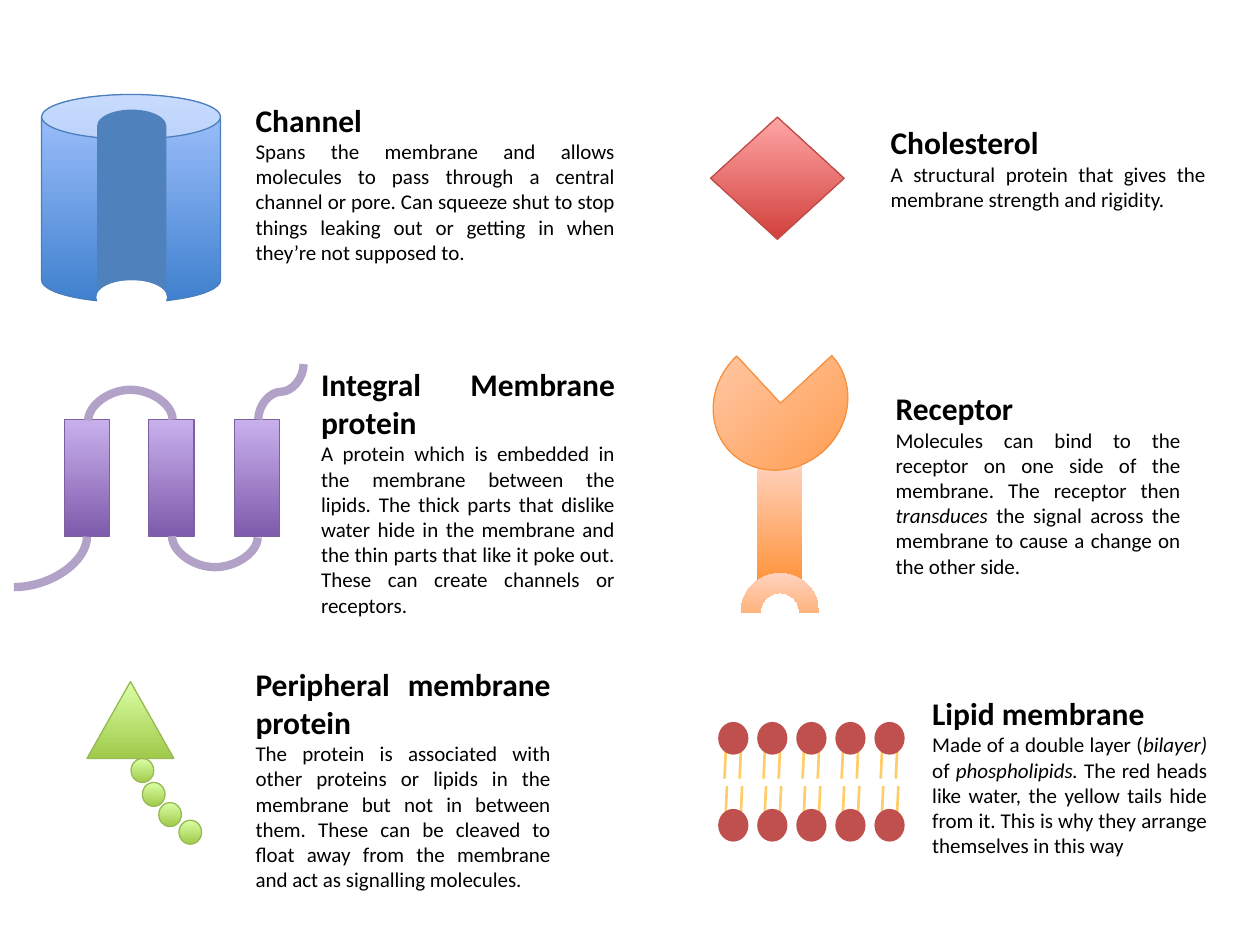
from dataclasses import dataclass

from lxml import etree
from pptx import Presentation
from pptx.dml.color import RGBColor
from pptx.enum.shapes import MSO_CONNECTOR, MSO_SHAPE
from pptx.enum.text import MSO_AUTO_SIZE, PP_ALIGN
from pptx.oxml.ns import qn
from pptx.util import Inches, Pt

CURVE, STRAIGHT = MSO_CONNECTOR.CURVE, MSO_CONNECTOR.STRAIGHT
CAN, OVAL, RECT = MSO_SHAPE.CAN, MSO_SHAPE.OVAL, MSO_SHAPE.RECTANGLE
PIE, ARC = MSO_SHAPE.PIE, MSO_SHAPE.BLOCK_ARC
TRIANGLE, DIAMOND = MSO_SHAPE.ISOSCELES_TRIANGLE, MSO_SHAPE.DIAMOND
JUSTIFY = PP_ALIGN.JUSTIFY
GROW = MSO_AUTO_SIZE.SHAPE_TO_FIT_TEXT


@dataclass
class Theme:
    font: str = "Calibri"
    heading: float = 18
    body: float = 12
    outline: float = 0.75
    loop_width: float = 4.75
    tail_width: float = 1.5
    text: str = "000000"
    white: str = "FFFFFF"
    pore: str = "4F81BD"
    loop: str = "B3A2C7"
    head: str = "C0504D"
    tail: str = "FFCC66"
    blue: tuple = ("3F80CE", "A4C4FF")
    blue_line: str = "4B7EBC"
    orange: tuple = ("FF953E", "FFD2BD")
    orange_line: str = "F69240"
    green: tuple = ("A0CA4A", "DAFFA5")
    green_line: str = "98B955"
    red: tuple = ("D1403C", "FFA6A5")
    red_line: str = "BF4C48"
    purple: tuple = ("7F5BAB", "C8B0ED")
    purple_line: str = "7D60A0"


theme = Theme()


def add_part(shapes, kind, box, fill, line=None, rotation=0):
    sp = shapes.add_shape(kind, *map(Inches, box))
    sp.shadow.inherit = False
    sp.rotation = rotation
    if isinstance(fill, tuple):
        sp.fill.gradient()
        sp.fill.gradient_angle = 90
        for stop, color in zip(sp.fill.gradient_stops, fill):
            stop.color.rgb = RGBColor.from_string(color)
    else:
        sp.fill.solid()
        sp.fill.fore_color.rgb = RGBColor.from_string(fill)
    if line:
        sp.line.color.rgb = RGBColor.from_string(line)
        sp.line.width = Pt(theme.outline)
    else:
        sp.line.fill.background()


def add_line(shapes, kind, ends, color, width):
    cxn = shapes.add_connector(kind, *map(Inches, ends))
    cxn.line.color.rgb = RGBColor.from_string(color)
    cxn.line.width = Pt(width)
    etree.SubElement(cxn._element.spPr, qn("a:effectLst"))
    return cxn


prs = Presentation()
prs.slide_width, prs.slide_height = Inches(10), Inches(7.5)
s = prs.slides.add_slide(prs.slide_layouts[6])

channel = s.shapes.add_group_shape().shapes
add_part(channel, CAN, (0.33, 0.75, 1.42, 1.65), theme.blue, theme.blue_line)
add_part(channel, OVAL, (0.77, 0.87, 0.55, 0.26), theme.pore)
add_part(channel, RECT, (0.77, 1, 0.55, 1.37), theme.pore)
add_part(channel, OVAL, (0.77, 2.23, 0.55, 0.26), theme.white, theme.white)

receptor = s.shapes.add_group_shape().shapes
add_part(receptor, RECT, (6.01, 3.67, 0.36, 0.93), theme.orange)
add_part(receptor, PIE, (5.64, 2.69, 1.11, 1.02), theme.orange, theme.orange_line, 317.1)
add_part(receptor, ARC, (5.88, 4.55, 0.62, 0.62), theme.orange)

peripheral = s.shapes.add_group_shape().shapes
add_part(peripheral, TRIANGLE, (0.69, 5.41, 0.69, 0.61), theme.green, theme.green_line)
for x, y in [(1.04, 6.02), (1.13, 6.21), (1.26, 6.37), (1.42, 6.51)]:
    add_part(peripheral, OVAL, (x, y, 0.18, 0.19), theme.green, theme.green_line)

add_part(s.shapes, DIAMOND, (5.64, 0.93, 1.06, 0.97), theme.red, theme.red_line)

integral = s.shapes.add_group_shape().shapes
for x in (0.51, 1.18, 1.86):
    add_part(integral, RECT, (x, 3.33, 0.36, 0.93), theme.purple, theme.purple_line)

loops = [
    ((1.03, 3, 0.01, 0.67), 90, ("flipH", "flipV"), "curvedConnector3", 25),
    ((1.7, 3.92, 0.01, 0.68), 270, ("flipH",), "curvedConnector3", 25),
    ((0.2, 4.17, 0.4, 0.58), 90, (), "curvedConnector2", None),
    ((2.01, 2.93, 0.44, 0.36), 90, ("flipH", "flipV"), "curvedConnector3", 0.5),
]
for (x, y, w, h), rotation, flips, preset, bend in loops:
    cxn = add_line(integral, CURVE, (x, y, x + w, y + h), theme.loop, theme.loop_width)
    xfrm = cxn._element.spPr.find(qn("a:xfrm"))
    xfrm.set("rot", str(rotation * 60000))
    for flip in flips:
        xfrm.set(flip, "1")
    geom = cxn._element.spPr.find(qn("a:prstGeom"))
    geom.set("prst", preset)
    if bend:
        guide = etree.SubElement(geom.find(qn("a:avLst")), qn("a:gd"))
        guide.set("name", "adj1")
        guide.set("fmla", f"val {int(bend * 100000)}")

bilayer = s.shapes.add_group_shape().shapes
for head_top, tail_start, tail_end, lean in [(5.73, 5.96, 6.18, -0.01), (6.42, 6.45, 6.24, 0.01)]:
    for i in range(5):
        x = 5.7 + 0.31 * i
        for dx in (0.06, 0.18):
            ends = (x + dx, tail_start, x + dx + lean, tail_end)
            add_line(bilayer, STRAIGHT, ends, theme.tail, theme.tail_width)
        add_part(bilayer, OVAL, (x, head_top, 0.24, 0.26), theme.head)

descriptions = [
    ((1.93, 0.75, 3.05, 1.41), "Channel", [
        "Spans the membrane and allows molecules to pass through a central channel or pore. "
        "Can squeeze shut to stop things leaking out or getting in when they’re not supposed to."]),
    ((7.01, 3.04, 2.46, 1.62), "Receptor", [
        "Molecules can bind to the receptor on one side of the membrane. The receptor then ",
        "transduces ",
        "the signal across the membrane to cause a change on the other side."]),
    ((1.93, 5.23, 2.54, 1.92), "Peripheral membrane protein", [
        "The protein is associated with other proteins or lipids in the membrane but not in "
        "between them. These can be cleaved to float away from the membrane and act as "
        "signalling molecules."]),
    ((6.97, 0.93, 2.7, 0.81), "Cholesterol", [
        "A structural protein that gives the membrane strength and rigidity."]),
    ((2.45, 2.85, 2.53, 2.12), "Integral Membrane protein", [
        "A protein which is embedded in the membrane between the lipids. The thick parts that "
        "dislike water hide in the membrane and the thin parts that like it poke out. These "
        "can create channels or receptors."]),
    ((7.3, 5.46, 2.38, 1.41), "Lipid membrane", [
        "Made of a double layer (", "bilayer)", " of ", "phospholipids.",
        " The red heads like water, the yellow tails hide from it. This is why they arrange "
        "themselves in this way"]),
]
for box, heading, body in descriptions:
    tf = s.shapes.add_textbox(*map(Inches, box)).text_frame
    tf.word_wrap = True
    tf.auto_size = GROW
    paragraphs = [
        (tf.paragraphs[0], [heading], theme.heading, True),
        (tf.add_paragraph(), body, theme.body, False),
    ]
    for p, texts, size, bold in paragraphs:
        p.alignment = JUSTIFY
        p.font.name = theme.font
        p.font.size = Pt(size)
        p.font.bold = bold
        p.font.color.rgb = RGBColor.from_string(theme.text)
        for i, text in enumerate(texts):
            r = p.add_run()
            r.text = text
            if i % 2:
                r.font.italic = True

prs.save("out.pptx")
